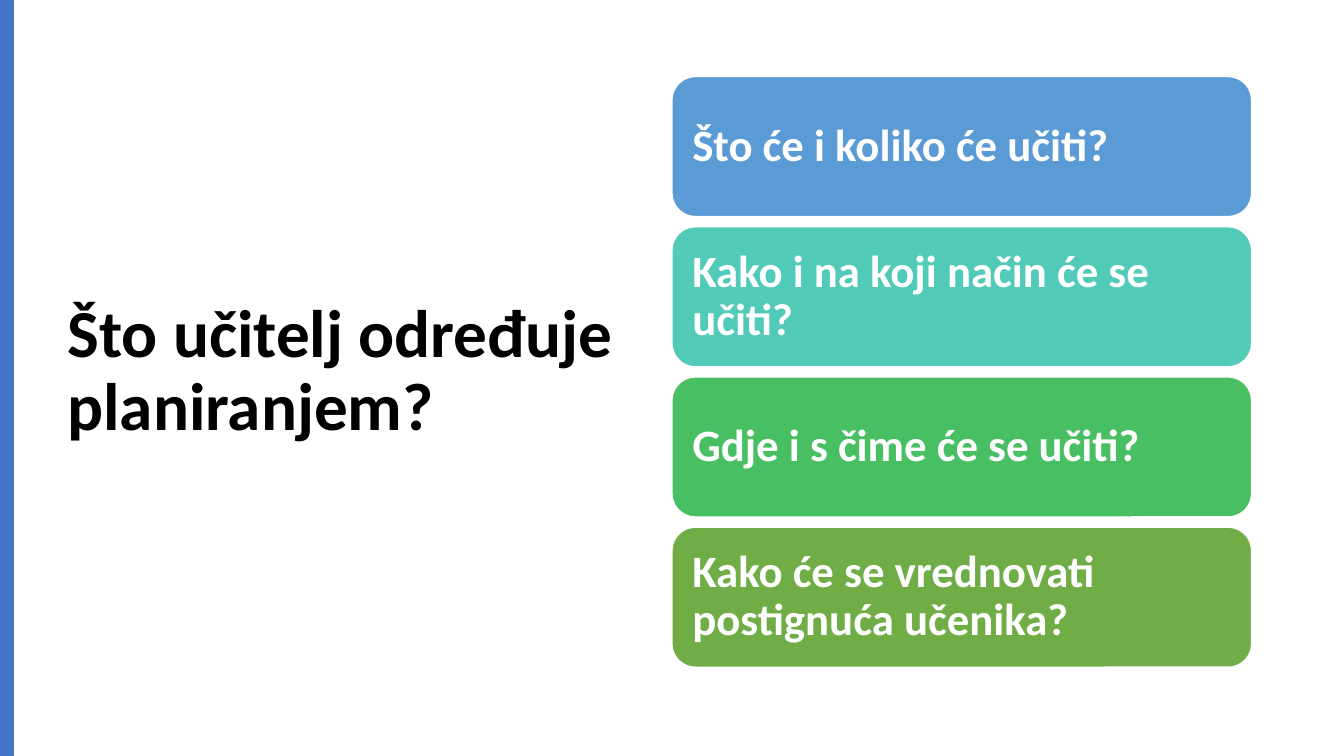
from typing import NamedTuple

from pptx import Presentation
from pptx.dml.color import RGBColor
from pptx.enum.shapes import MSO_SHAPE as Kind
from pptx.enum.text import MSO_ANCHOR as Anchor, MSO_AUTO_SIZE as Fit, PP_ALIGN as Align
from pptx.shapes.autoshape import Shape
from pptx.slide import Slide
from pptx.text.text import TextFrame
from pptx.util import Pt

WIDE, HIGH = 960, 540
LEFT, TOP, WIDTH, HEIGHT, STEP = 480, 54.7, 414, 100, 107.3
INSET = 9.6


class Card(NamedTuple):
    text: str
    fill: str


CARDS = [
    Card("Što će i koliko će učiti?", "5B9BD5"),
    Card("Kako i na koji način će se učiti?", "52CAB8"),
    Card("Gdje i s čime će se učiti?", "49BF64"),
    Card("Kako će se vrednovati postignuća učenika?", "70AD47"),
]


def color(code: str) -> RGBColor:
    return RGBColor.from_string(code)


def write(frame: TextFrame, text: str, size: float, code: str) -> None:
    frame.text = text
    frame.word_wrap = True
    frame.auto_size = Fit.NONE
    frame.vertical_anchor = Anchor.MIDDLE
    para = frame.paragraphs[0]
    para.alignment = Align.LEFT
    para.line_spacing = 0.9
    font = para.runs[0].font
    font.name, font.size, font.bold = "Calibri", Pt(size), True
    font.color.rgb = color(code)


def add_block(slide: Slide, kind: Kind, left: float, top: float,
              width: float, height: float, fill: str) -> Shape:
    """Add a filled shape with neither shadow nor line."""
    block = slide.shapes.add_shape(kind, Pt(left), Pt(top), Pt(width), Pt(height))
    block.shadow.inherit = False
    block.fill.solid()
    block.fill.fore_color.rgb = color(fill)
    block.line.fill.background()
    return block


def add_card(slide: Slide, card: Card, top: float) -> None:
    block = add_block(slide, Kind.ROUNDED_RECTANGLE, LEFT, top, WIDTH, HEIGHT, card.fill)
    block.line.color.rgb = color("FFFFFF")
    block.line.width = Pt(1)
    frame = block.text_frame
    frame.margin_left = frame.margin_right = Pt(INSET)
    frame.margin_top = frame.margin_bottom = Pt(INSET)
    write(frame, card.text, 32, "FFFFFF")


def main() -> None:
    deck = Presentation()
    deck.slide_width, deck.slide_height = Pt(WIDE), Pt(HIGH)
    slide = deck.slides.add_slide(deck.slide_layouts.get_by_name("Title Only"))

    title = slide.shapes.title
    title.left, title.top = Pt(41), Pt(49)
    title.width, title.height = Pt(408), Pt(433.4)
    write(title.text_frame, "Što učitelj određuje planiranjem?", 48, "000000")

    add_block(slide, Kind.RECTANGLE, 0, 0, 10, HIGH, "4472C4")
    for row, card in enumerate(CARDS):
        add_card(slide, card, TOP + row * STEP)

    deck.save("out.pptx")


if __name__ == "__main__":
    main()
